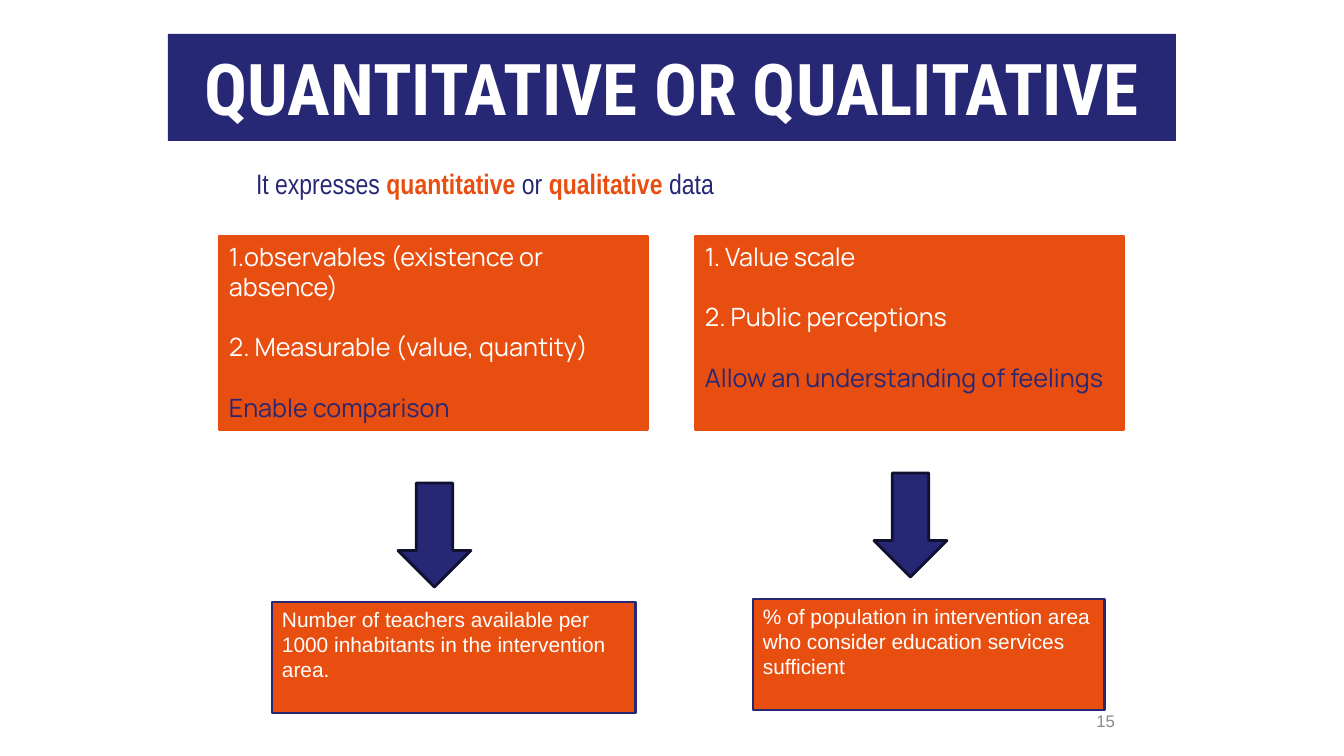
from pptx import Presentation
from pptx.dml.color import RGBColor
from pptx.enum.shapes import MSO_SHAPE
from pptx.enum.text import MSO_ANCHOR, PP_ALIGN
from pptx.util import Emu, Pt

RECT, ARROW = MSO_SHAPE.RECTANGLE, MSO_SHAPE.DOWN_ARROW
TOP, MIDDLE = MSO_ANCHOR.TOP, MSO_ANCHOR.MIDDLE
LEFT, CENTER, RIGHT = PP_ALIGN.LEFT, PP_ALIGN.CENTER, PP_ALIGN.RIGHT

# Content
TITLE = "QUANTITATIVE OR QUALITATIVE"
INTRO = [
    ("It expresses ", False),
    ("quantitative ", True),
    ("or ", False),
    ("qualitative ", True),
    ("data", False),
]
# Boxes are (left, top, width, height) in px
COLUMNS = [
    {
        "left": 219,
        "points": ["1.observables (existence or absence)", "2. Measurable (value, quantity)"],
        "purpose": "Enable comparison",
        "arrow_top": 483,
        "example": "Number of teachers available per 1000 inhabitants in the intervention area.",
        "example_box": (272, 602, 364, 111),
    },
    {
        "left": 695,
        "points": ["1. Value scale", "2. Public perceptions"],
        "purpose": "Allow an understanding of feelings",
        "arrow_top": 473,
        "example": "% of population in intervention area who consider education services sufficient",
        "example_box": (753, 599, 352, 111),
    },
]
PAGE_NUMBER = "15"


class Theme:
    navy, orange, white = "262775", "E84E0F", "FFFFFF"
    arrow_edge, grey = "101031", "888888"
    title_font, intro_font, point_font, plain_font = "Roboto Condensed", "Arial Narrow", "Manrope", "Arial"
    title_size, intro_size, point_size, example_size, number_size = 51, 20, 18, 14.9, 12
    line_width, point_gap = 2, 21.6


# Layout
SLIDE_SIZE = (1344, 756)
TITLE_BOX = (168, 34, 1008, 107)
INTRO_BOX = (246, 165, 899, 40)
NUMBER_BOX = (890, 701, 235, 40)
POINTS_TOP, POINTS_WIDTH, POINTS_HEIGHT = 236, 429, 194
ARROW_WIDTH, ARROW_HEIGHT = 73, 104
ARROW_OFFSET = 179


def px(length):
    return Emu(round(length * 914400 / 100.8))


def add_panel(page, kind, box, fill, line=None):
    panel = page.shapes.add_shape(kind, *map(px, box))
    panel.shadow.inherit = False
    panel.fill.solid()
    panel.fill.fore_color.rgb = RGBColor.from_string(fill)
    if line:
        panel.line.color.rgb = RGBColor.from_string(line)
        panel.line.width = Pt(Theme.line_width)
    else:
        panel.line.fill.background()
    return panel


def write(shape, paras, *, font, size, align=LEFT, anchor=TOP, inset=5, gap=0, spacing=1.0):
    """Each para is a list of (text, colour, bold) spans."""
    frame = shape.text_frame
    frame.word_wrap = True
    frame.vertical_anchor = anchor
    frame.margin_left = frame.margin_right = px(10)
    frame.margin_top = frame.margin_bottom = px(inset)
    for index, spans in enumerate(paras):
        para = frame.add_paragraph() if index else frame.paragraphs[0]
        para.alignment = align
        para.line_spacing = spacing
        para.space_before = Pt(gap if index else 0)
        for text, colour, bold in spans:
            span = para.add_run()
            span.text = text
            span.font.name = font
            span.font.size = Pt(size)
            span.font.bold = bold
            span.font.color.rgb = RGBColor.from_string(colour)


def main():
    deck = Presentation()
    deck.slide_width, deck.slide_height = map(px, SLIDE_SIZE)
    page = deck.slides.add_slide(deck.slide_layouts[6])

    # Page number
    number = page.shapes.add_textbox(*map(px, NUMBER_BOX))
    write(number, [[(PAGE_NUMBER, Theme.grey, False)]], font=Theme.plain_font,
          size=Theme.number_size, align=RIGHT, anchor=MIDDLE)

    # Title band
    band = add_panel(page, RECT, TITLE_BOX, Theme.navy)
    write(band, [[(TITLE, Theme.white, True)]], font=Theme.title_font,
          size=Theme.title_size, align=CENTER, inset=10)

    # Introductory sentence
    intro = page.shapes.add_textbox(*map(px, INTRO_BOX))
    spans = [(text, Theme.orange if key else Theme.navy, key) for text, key in INTRO]
    write(intro, [spans], font=Theme.intro_font, size=Theme.intro_size, spacing=0.9)

    # Columns: points, arrow, example
    for column in COLUMNS:
        left = column["left"]
        points = add_panel(page, RECT, (left, POINTS_TOP, POINTS_WIDTH, POINTS_HEIGHT),
                           Theme.orange, Theme.orange)
        paras = [[(text, Theme.white, False)] for text in column["points"]]
        paras.append([(column["purpose"], Theme.navy, False)])
        write(points, paras, font=Theme.point_font, size=Theme.point_size, gap=Theme.point_gap)

        arrow_box = (left + ARROW_OFFSET, column["arrow_top"], ARROW_WIDTH, ARROW_HEIGHT)
        add_panel(page, ARROW, arrow_box, Theme.navy, Theme.arrow_edge)

        example = add_panel(page, RECT, column["example_box"], Theme.orange, Theme.navy)
        write(example, [[(column["example"], Theme.white, False)]],
              font=Theme.plain_font, size=Theme.example_size)

    deck.save("out.pptx")


if __name__ == "__main__":
    main()
